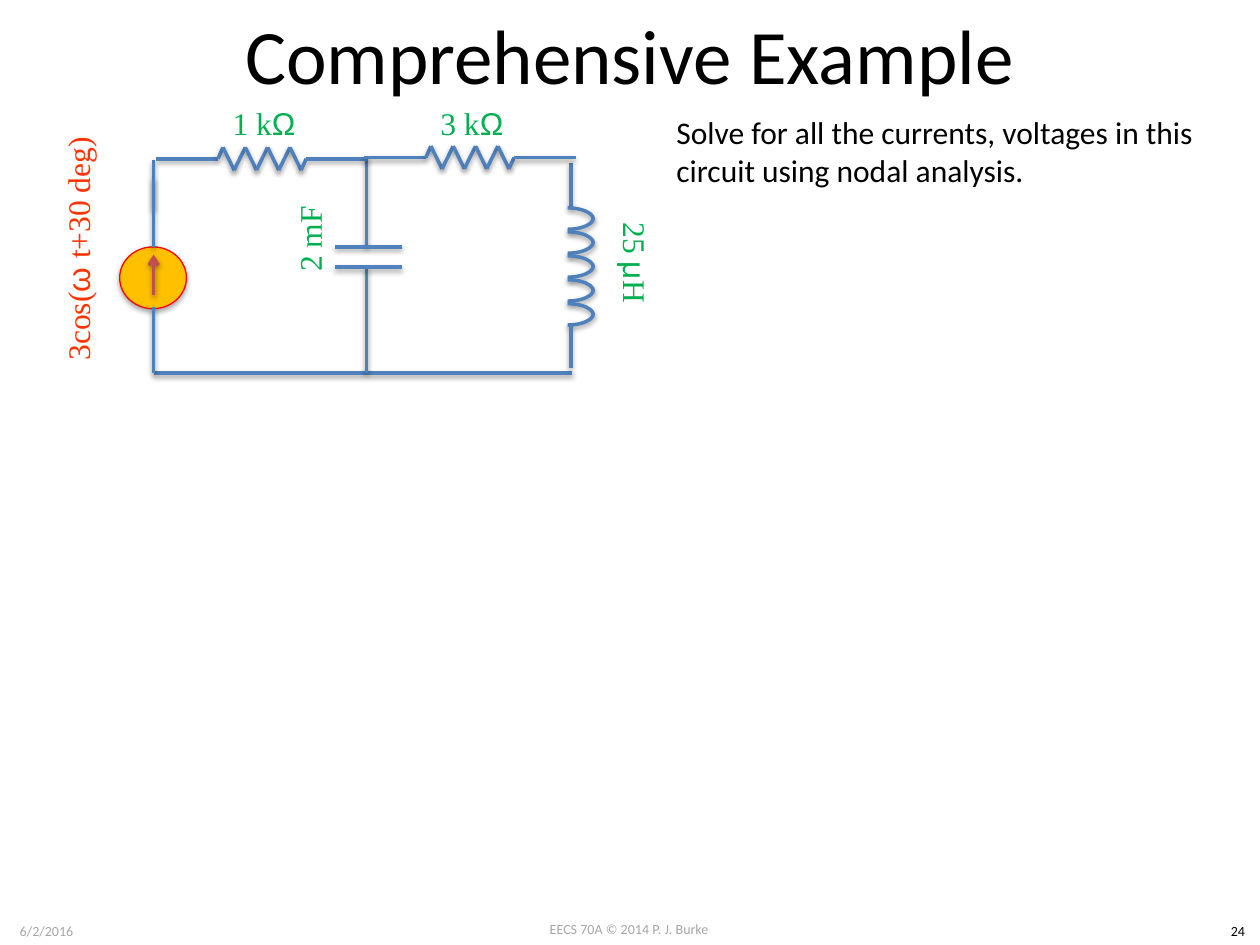
from lxml import etree
from pptx import Presentation
from pptx.dml.color import RGBColor
from pptx.enum.shapes import MSO_CONNECTOR, MSO_SHAPE
from pptx.enum.text import MSO_ANCHOR, MSO_AUTO_SIZE, PP_ALIGN
from pptx.oxml.ns import qn
from pptx.util import Inches, Pt

STRAIGHT = MSO_CONNECTOR.STRAIGHT
ARC, OVAL = MSO_SHAPE.ARC, MSO_SHAPE.OVAL
TOP, MIDDLE = MSO_ANCHOR.TOP, MSO_ANCHOR.MIDDLE
LEFT, CENTER = PP_ALIGN.LEFT, PP_ALIGN.CENTER
FIT_SHAPE = MSO_AUTO_SIZE.SHAPE_TO_FIT_TEXT

BLACK = RGBColor(0x00, 0x00, 0x00)
GRAY = RGBColor(0xA6, 0xA6, 0xA6)
GREEN = RGBColor(0x00, 0xB0, 0x50)
ORANGE = RGBColor(0xFF, 0x33, 0x00)
BLUE = RGBColor(0x4F, 0x81, 0xBD)
BRICK = RGBColor(0xC0, 0x50, 0x4D)
AMBER = RGBColor(0xFF, 0xC0, 0x00)
RED = RGBColor(0xFF, 0x00, 0x00)

SANS, SERIF, GREEK = "Calibri", "Times New Roman", "Arial"

FOOTERS = [
    ((3.83, 7.26, 2.33, 0.24), "EECS 70A © 2014 P. J. Burke", GRAY),
    ((0, 7.27, 0.74, 0.24), "6/2/2016", GRAY),
    ((9.65, 7.27, 0.35, 0.24), "24", BLACK),
]
TITLE = "Comprehensive Example"
TASK = "Solve for all the currents, voltages in this circuit using nodal analysis."
RESISTORS = [
    (1.24, 1.26, 1.5, [("1 k", SERIF), ("Ω", GREEK)]),
    (2.89, 1.25, 3.15, [("3 k", SERIF), ("Ω", GREEK)]),
]
LABELS = [
    ((-0.44, 1.67, 2.11, 0.61), 270, ORANGE,
     [("3cos(", SERIF), ("ω ", GREEK), ("t+30 deg)", SERIF)]),
    ((4.45, 1.72, 1.19, 0.73), 90, GREEN,
     [("25 ", SERIF), ("μ", GREEK), ("H", SERIF)]),
    ((1.86, 1.53, 1.19, 0.73), 270, GREEN, [("2 mF", SERIF)]),
]
SOURCE_X, CAP_X, COIL_X = 1.22, 2.91, 4.53
GROUND_Y = 2.96
PLATES = (1.96, 2.12)
WIRES = [
    (SOURCE_X, GROUND_Y, 4.54, GROUND_Y),
    (SOURCE_X, 1.66, SOURCE_X, 1.27),
    (CAP_X, GROUND_Y, CAP_X, PLATES[1]),
    (CAP_X, PLATES[0], CAP_X, 1.26),
] + [(2.66, y, 3.19, y) for y in PLATES]

LEAD, HALF_TOOTH, TEETH, TOOTH_H = 0.49, 0.04, 8, 0.09
TOOTH_STEP = 0.62 / (TEETH - 1)
TURNS, TURN_STEP, COIL_TOP = 5, 0.19, 1.64


def box(values):
    return [Inches(v) for v in values]


def add_shadow(sp, alpha=38, dist=1.6):
    effects = etree.SubElement(sp._element.spPr, qn("a:effectLst"))
    shadow = etree.SubElement(effects, qn("a:outerShdw"), blurRad=str(Pt(3.1)),
                              dist=str(Pt(dist)), dir="5400000", rotWithShape="0")
    color = etree.SubElement(shadow, qn("a:srgbClr"), val="000000")
    etree.SubElement(color, qn("a:alpha"), val=str(alpha * 1000))


def add_line(shapes, ends, color=BLUE, arrow=False):
    line = shapes.add_connector(STRAIGHT, *box(ends))
    line.line.color.rgb = color
    line.line.width = Pt(2)
    if arrow:
        etree.SubElement(line.line._get_or_add_ln(), qn("a:tailEnd"), type="arrow")
    add_shadow(line)


def add_text(shapes, place, runs, size, color, align=CENTER, anchor=MIDDLE,
             rotation=0, grow=False):
    sp = shapes.add_textbox(*box(place))
    sp.rotation = rotation
    tf = sp.text_frame
    tf.word_wrap = True
    tf.vertical_anchor = anchor
    if grow:
        tf.auto_size = FIT_SHAPE
    p = tf.paragraphs[0]
    p.alignment = align
    for text, font in runs:
        r = p.add_run()
        r.text = text
        r.font.name = font
        r.font.size = Pt(size)
        r.font.color.rgb = color


def add_resistor(shapes, left, y, label_left, runs):
    group = shapes.add_group_shape().shapes
    add_text(group, (label_left, 0.61, 1.19, 0.73), runs, 18, GREEN)
    start = left + LEAD
    peaks = [(start + HALF_TOOTH + i * TOOTH_STEP, y + (TOOTH_H if i % 2 else -TOOTH_H))
             for i in range(TEETH)]
    end = peaks[-1][0] + HALF_TOOTH
    points = [(left, y), (start, y), *peaks, (end, y), (end + LEAD, y)]
    for a, b in zip(points, points[1:]):
        add_line(group, a + b)


def add_source(shapes):
    group = shapes.add_group_shape().shapes
    circle = group.add_shape(OVAL, *box((0.95, 1.96, 0.53, 0.49)))
    circle.fill.solid()
    circle.fill.fore_color.rgb = AMBER
    circle.line.color.rgb = RED
    circle.line.width = Pt(0.75)
    add_shadow(circle, 35, 1.8)
    add_line(group, (SOURCE_X, 2.34, SOURCE_X, 2.02), BRICK, arrow=True)
    add_line(group, (SOURCE_X, 1.96, SOURCE_X, 1.41))
    add_line(group, (SOURCE_X, 2.44, SOURCE_X, GROUND_Y))


def add_inductor(shapes):
    group = shapes.add_group_shape().shapes
    add_line(group, (COIL_X, 1.64, COIL_X, 1.29))
    for turn in range(TURNS):
        y = COIL_TOP + turn * TURN_STEP
        for top, flipped in ((y + 0.01, False), (y, True)):
            arc = group.add_shape(ARC, *box((4.3, top, 0.41, 0.18)))
            arc.fill.background()
            arc.line.color.rgb = BLUE
            arc.line.width = Pt(2)
            if flipped:
                arc._element.spPr.xfrm.set("flipV", "1")
            add_shadow(arc)
    add_line(group, (COIL_X, 2.92, COIL_X, 2.57))


def main():
    prs = Presentation()
    prs.slide_width, prs.slide_height = Inches(10), Inches(7.5)
    s = prs.slides.add_slide(prs.slide_layouts[6])
    shapes = s.shapes
    for place, text, color in FOOTERS:
        add_text(shapes, place, [(text, SANS)], 8, color, anchor=TOP, grow=True)
    add_text(shapes, (0.5, 0, 9, 0.85), [(TITLE, SANS)], 44, BLACK)
    add_text(shapes, (5.27, 0.85, 4.59, 0.71), [(TASK, SANS)], 18, BLACK,
             LEFT, TOP, grow=True)
    for wire in WIRES:
        add_line(shapes, wire)
    add_source(shapes)
    add_inductor(shapes)
    for resistor in RESISTORS:
        add_resistor(shapes, *resistor)
    for place, rotation, color, runs in LABELS:
        add_text(shapes, place, runs, 18, color, rotation=rotation)
    prs.save("out.pptx")


if __name__ == "__main__":
    main()
